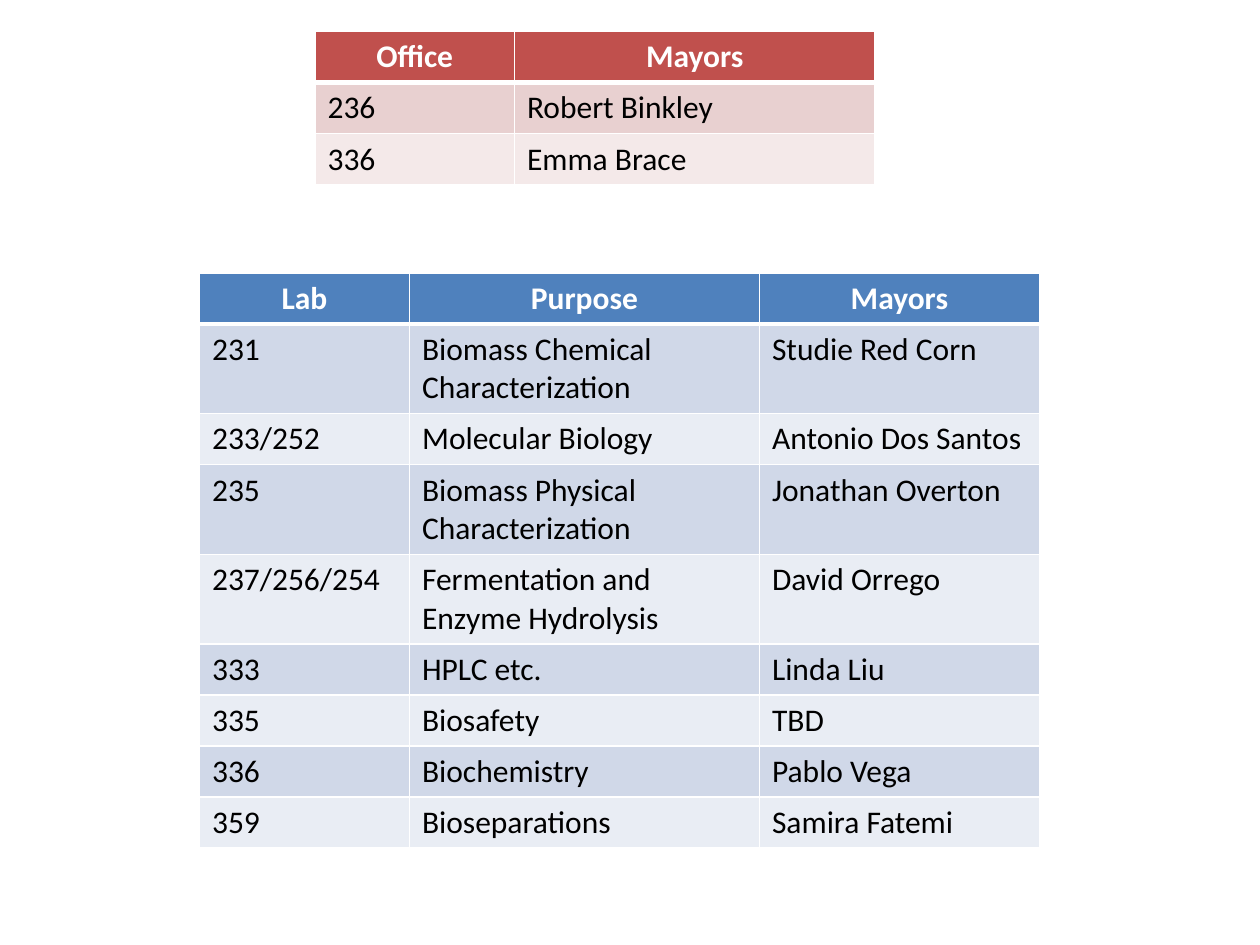
from lxml import etree
from pptx import Presentation
from pptx.dml.color import RGBColor
from pptx.enum import text
from pptx.oxml import ns
from pptx.util import Pt


def paint(code):
    return RGBColor.from_string(code)


class Deck:
    font = "Calibri"
    size = 18
    high = 29.2
    white = "FFFFFF"
    black = "000000"

    def __init__(self, show):
        self.slide = show.slides.add_slide(show.slide_layouts[6])

    def edge(self, cell, side, width):
        props = cell._tc.get_or_add_tcPr()
        line = etree.SubElement(props, ns.qn("a:ln" + side), w=str(Pt(width)))
        fill = etree.SubElement(line, ns.qn("a:solidFill"))
        etree.SubElement(fill, ns.qn("a:srgbClr"), val=self.white)

    def cell(self, cell, words, row, fill):
        head = row == 0
        cell.text = words
        para = cell.text_frame.paragraphs[0]
        para.alignment = text.PP_ALIGN.CENTER if head else text.PP_ALIGN.LEFT
        para.font.name = self.font
        para.font.size = Pt(self.size)
        para.font.bold = head
        para.font.color.rgb = paint(self.white if head else self.black)
        for side in "LRTB":
            thick = (row, side) in ((0, "B"), (1, "T"))
            self.edge(cell, side, 3 if thick else 1)
        cell.fill.solid()
        cell.fill.fore_color.rgb = paint(fill)

    def table(self, left, top, high, cols, rows, fills):
        frame = self.slide.shapes.add_table(
            len(rows), len(cols), Pt(left), Pt(top), Pt(sum(cols)), Pt(high))
        grid = frame.table
        for col, wide in zip(grid.columns, cols):
            col.width = Pt(wide)
        head, odd, even = fills
        for i, row in enumerate(rows):
            grid.rows[i].height = Pt(self.high)
            fill = head if i == 0 else odd if i % 2 else even
            for j, words in enumerate(row):
                self.cell(grid.cell(i, j), words, i, fill)
        frame.height = Pt(high)


LABS = [
    ("Lab", "Purpose", "Mayors"),
    ("231", "Biomass Chemical Characterization", "Studie Red Corn"),
    ("233/252", "Molecular Biology", "Antonio Dos Santos"),
    ("235", "Biomass Physical Characterization", "Jonathan Overton"),
    ("237/256/254", "Fermentation and Enzyme Hydrolysis", "David Orrego"),
    ("333", "HPLC etc.", "Linda Liu"),
    ("335", "Biosafety", "TBD"),
    ("336", "Biochemistry", "Pablo Vega"),
    ("359", "Bioseparations", "Samira Fatemi"),
]
ROOMS = [
    ("Office", "Mayors"),
    ("236", "Robert Binkley"),
    ("336", "Emma Brace"),
]


def main():
    show = Presentation()
    show.slide_width, show.slide_height = Pt(720), Pt(540)
    deck = Deck(show)
    deck.table(114, 156, 326.4, (120, 200, 160), LABS,
               ("4F81BD", "D0D8E8", "E9EDF4"))
    deck.table(180, 18, 87.6, (114, 206), ROOMS,
               ("C0504D", "E8D0D0", "F4E9E9"))
    show.save("out.pptx")


if __name__ == "__main__":
    main()
